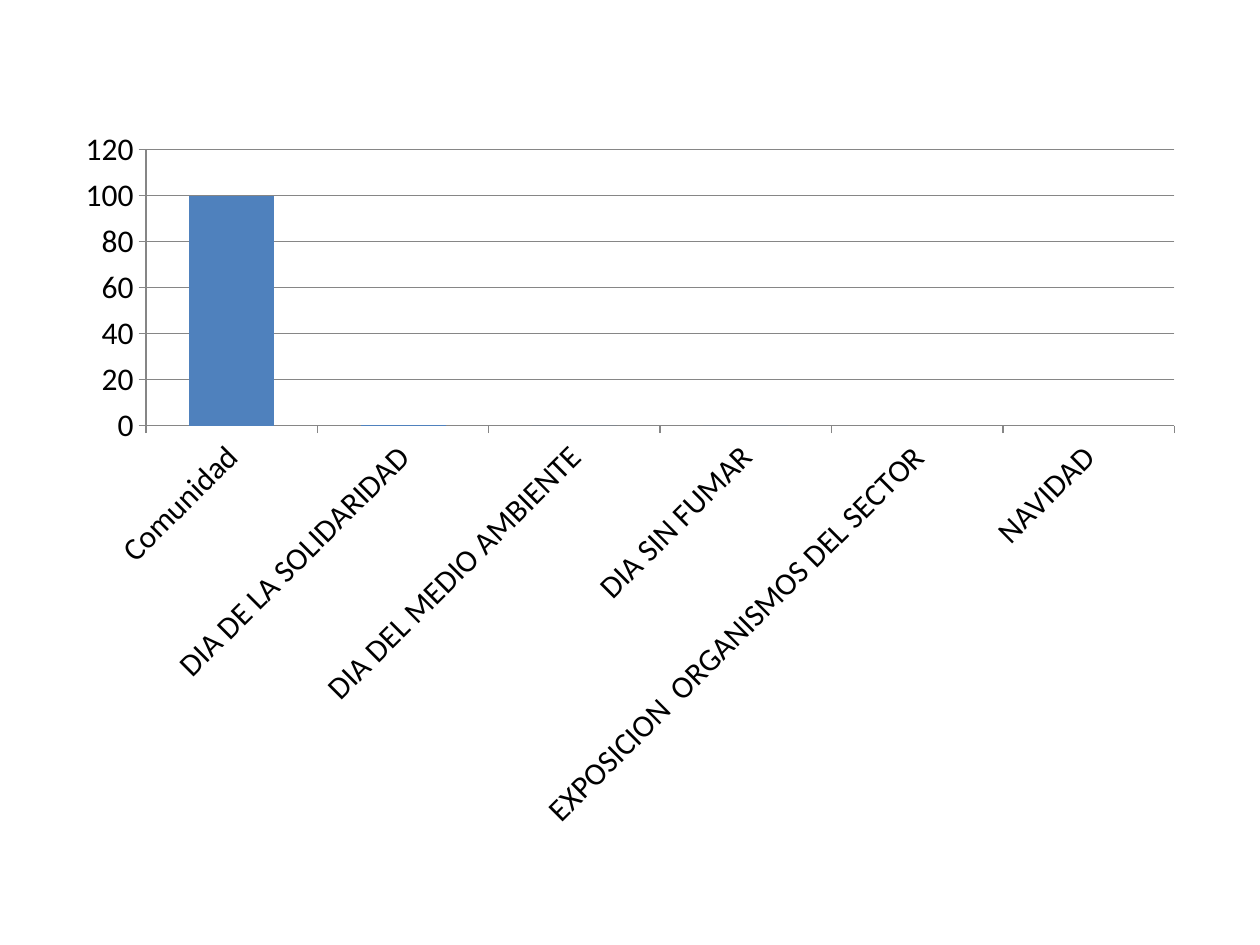
from dataclasses import dataclass
from pptx import Presentation
from pptx.chart.data import CategoryChartData as Data
from pptx.dml.color import RGBColor as RGB
from pptx.enum.chart import XL_CHART_TYPE as Kind, XL_TICK_MARK as Tick
from pptx.util import Inches, Pt


@dataclass
class Theme:
    font: str = "Calibri"
    size: int = 18
    ink: str = "000000"
    bar: str = "4F81BD"
    rule: str = "868686"


theme = Theme()
deck = Presentation()
deck.slide_width, deck.slide_height = Inches(10), Inches(7.5)
wide, high = deck.slide_width, deck.slide_height
slide = deck.slides.add_slide(deck.slide_layouts[6])

days = {
    "Comunidad": 100,
    "DIA DE LA SOLIDARIDAD": 0.4,
    "DIA DEL MEDIO AMBIENTE": 0,
    "DIA SIN FUMAR": 0,
    "EXPOSICION  ORGANISMOS DEL SECTOR": None,
    "NAVIDAD": None,
}
data = Data()
data.categories = list(days)
data.add_series("Series 1", list(days.values()))

frame = slide.shapes.add_chart(
    Kind.COLUMN_CLUSTERED,
    int(wide * 0.05), Inches(0.92), int(wide * 0.9), int(high * 0.77), data)
chart = frame.chart
chart.has_title = False
chart.has_legend = False
chart.font.name = theme.font
chart.font.size = Pt(theme.size)
chart.font.color.rgb = RGB.from_string(theme.ink)

plot = chart.plots[0]
plot.gap_width = 102
plot.vary_by_categories = False
fill = plot.series[0].format.fill
fill.solid()
fill.fore_color.rgb = RGB.from_string(theme.bar)

cats, vals = chart.category_axis, chart.value_axis
vals.minimum_scale, vals.maximum_scale, vals.major_unit = 0, 120, 20
vals.has_major_gridlines = True
for axis in (cats, vals):
    axis.major_tick_mark = Tick.OUTSIDE
    axis.minor_tick_mark = Tick.NONE
for part in (cats, vals, vals.major_gridlines):
    part.format.line.color.rgb = RGB.from_string(theme.rule)
    part.format.line.width = Pt(0.75)

labels = cats.tick_labels
labels.font.size = Pt(theme.size)
labels.font.name = theme.font
labels.font.color.rgb = RGB.from_string(theme.ink)
turn = cats._element.txPr.bodyPr
turn.set("rot", str(-45 * 60000))
turn.set("vert", "horz")

deck.save("out.pptx")
